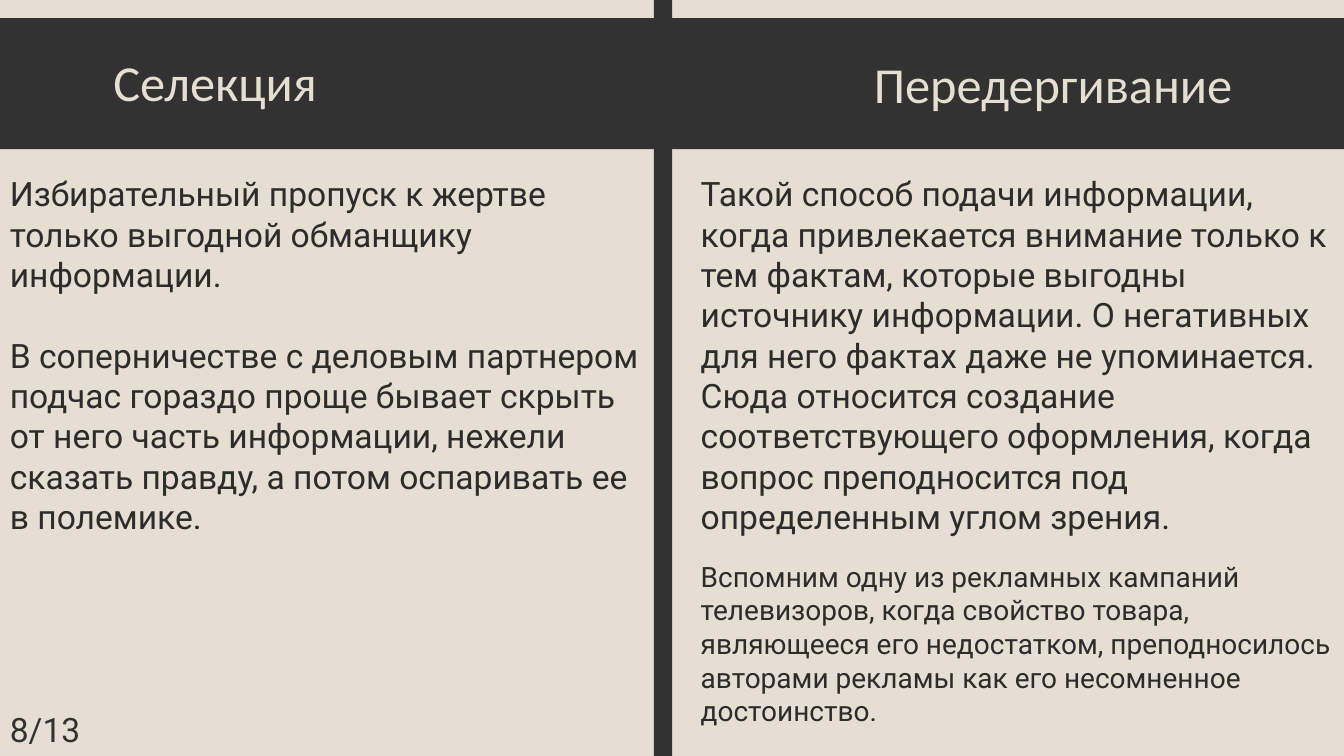
from pptx import Presentation
from pptx.dml.color import RGBColor
from pptx.enum.shapes import MSO_SHAPE
from pptx.enum.text import PP_ALIGN
from pptx.util import Cm, Pt

CREAM = RGBColor(0xE4, 0xDF, 0xD2)
DARK = RGBColor(0x32, 0x32, 0x32)
INK = RGBColor(0x2C, 0x2C, 0x2C)
WIDE, HIGH = 33.87, 19.05
BAND = 0.46


def add_bar(slide, left, top, width, height):
    bar = slide.shapes.add_shape(
        MSO_SHAPE.RECTANGLE, Cm(left), Cm(top), Cm(width), Cm(height))
    bar.shadow.inherit = False
    bar.fill.solid()
    bar.fill.fore_color.rgb = DARK
    bar.line.fill.background()


def add_text(slide, box, lines, size, color=INK, font="Roboto",
             align=PP_ALIGN.LEFT, wrap=True, gap=0):
    frame = slide.shapes.add_textbox(*map(Cm, box)).text_frame
    frame.word_wrap = wrap
    frame.text = "\n".join(lines)
    for index, para in enumerate(frame.paragraphs):
        para.alignment = align
        if index:
            para.space_before = Pt(gap)
        for run in para.runs:
            run.font.size = Pt(size)
            run.font.name = font
            run.font.color.rgb = color


def add_frame(slide, left, top, width, height):
    add_bar(slide, left, top + BAND, width, 3.3)
    add_bar(slide, left + 16.48, top, BAND, height)


def add_panel(slide, box, title, place, lines, note=None):
    left, top, width, height = box
    shift, drop, span = place
    add_text(slide, (left + shift, top + drop, span, 1.8), [title], 36,
             CREAM, "Calibri", PP_ALIGN.CENTER, False)
    add_text(slide, (left, top + 4.24, width, 9.5), lines, 24, gap=28.8)
    if note:
        add_text(slide, (left, top + 13.97, width, 4.52), [note], 20)


def add_count(slide, left, top, width, height):
    add_text(slide, (left, top, width, height), ["8/13"], 24, DARK, wrap=False)


def main():
    deck = Presentation()
    deck.slide_width, deck.slide_height = Cm(WIDE), Cm(HIGH)
    slide = deck.slides.add_slide(deck.slide_layouts[6])
    slide.background.fill.solid()
    slide.background.fill.fore_color.rgb = CREAM

    add_frame(slide, 0, 0, WIDE, HIGH)
    half = 16.46
    add_panel(
        slide, (0, 0, half, HIGH), "Селекция ", (2.57, 1.17, 5.99),
        ["Избирательный пропуск к жертве только выгодной обманщику "
         "информации.",
         "В соперничестве с деловым партнером подчас гораздо проще бывает "
         "скрыть от него часть информации, нежели сказать правду, а потом "
         "оспаривать ее в полемике."])
    add_panel(
        slide, (WIDE - half, 0, half, HIGH), "Передергивание ",
        (4.31, 1.22, 9.93),
        ["Такой способ подачи информации, когда привлекается внимание только "
         "к тем фактам, которые выгодны источнику информации. О негативных "
         "для него фактах даже не упоминается. Сюда относится создание "
         "соответствующего оформления, когда вопрос преподносится под "
         "определенным углом зрения."],
        "Вспомним одну из рекламных кампаний телевизоров, когда свойство "
        "товара, являющееся его недостатком, преподносилось авторами рекламы "
        "как его несомненное достоинство.")
    add_count(slide, 0, 17.73, 2.31, 1.27)
    deck.save("out.pptx")


if __name__ == "__main__":
    main()
